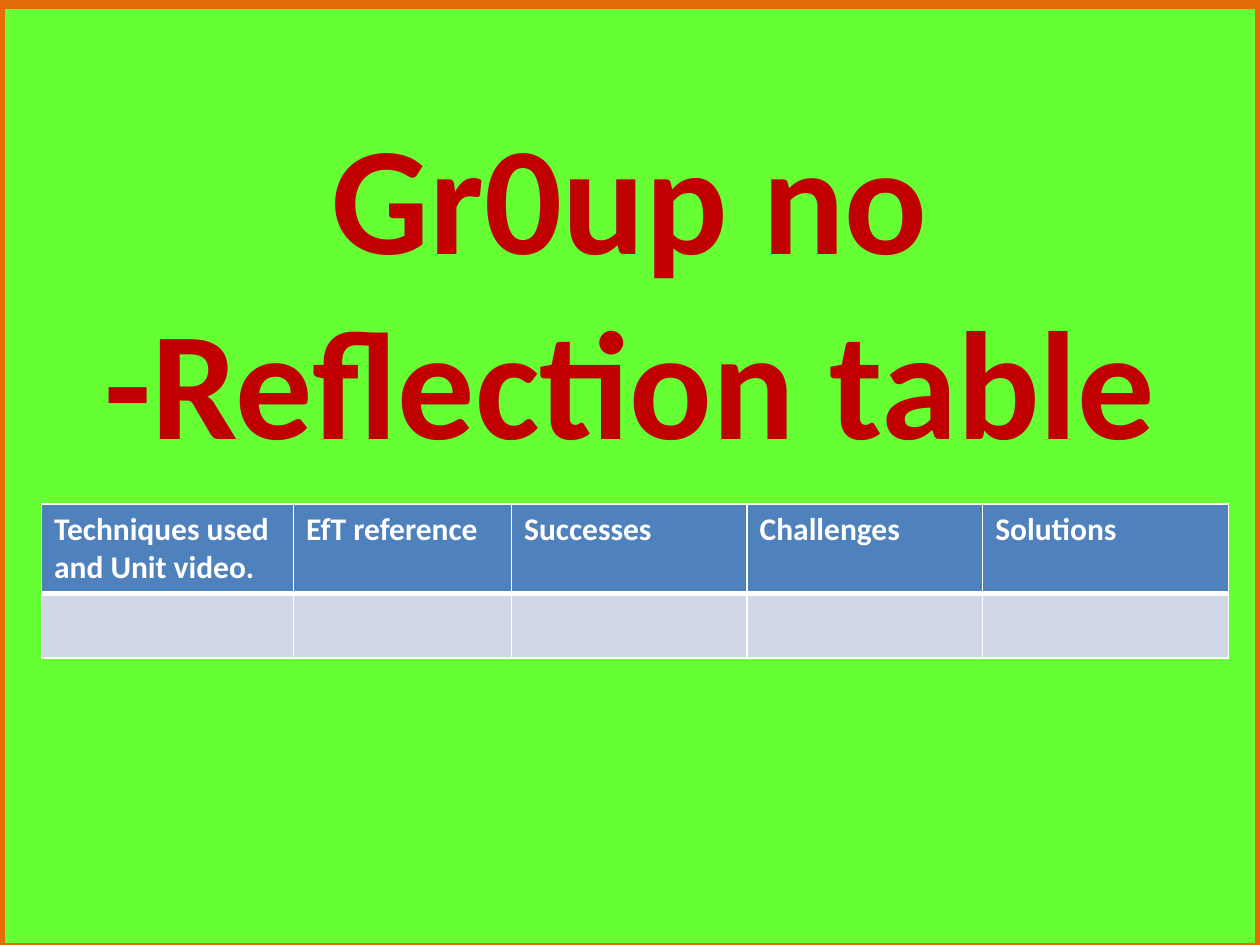
import pptx
import pptx.dml.color
import pptx.enum.shapes
import pptx.enum.text
import pptx.oxml.ns
import pptx.util
from lxml import etree

SLIDE_WIDTH, SLIDE_HEIGHT = 10, 7.5
COLUMN_WIDTHS = [2, 1.73, 1.87, 1.87, 1.95]
ROW_HEIGHTS = [0.7, 0.51]
HEADINGS = [
    "Techniques used and Unit video.",
    "EfT reference",
    "Successes",
    "Challenges",
    "Solutions",
]


def inches(value):
    return pptx.util.Inches(value)


def colour(code):
    return pptx.dml.color.RGBColor.from_string(code)


def style_text(para, size, code):
    para.font.name = "Calibri"
    para.font.size = pptx.util.Pt(size)
    para.font.bold = True
    para.font.color.rgb = colour(code)


def add_title_panel(page, text):
    panel = page.shapes.add_shape(
        pptx.enum.shapes.MSO_SHAPE.RECTANGLE,
        0, inches(0.03), inches(SLIDE_WIDTH), inches(SLIDE_HEIGHT),
    )
    panel.shadow.inherit = False
    panel.fill.solid()
    panel.fill.fore_color.rgb = colour("66FF33")
    panel.line.color.rgb = colour("E46C0A")
    panel.line.width = pptx.util.Pt(6)
    frame = panel.text_frame
    frame.word_wrap = True
    frame.vertical_anchor = pptx.enum.text.MSO_ANCHOR.TOP
    frame.margin_top = inches(0.77)
    para = frame.paragraphs[0]
    para.text = text
    para.alignment = pptx.enum.text.PP_ALIGN.CENTER
    style_text(para, 88, "C00000")


def add_borders(cell, widths):
    properties = cell._tc.get_or_add_tcPr()
    for side, width in widths.items():
        line = etree.SubElement(
            properties, pptx.oxml.ns.qn(f"a:ln{side}"), w=str(pptx.util.Pt(width))
        )
        fill = etree.SubElement(line, pptx.oxml.ns.qn("a:solidFill"))
        etree.SubElement(fill, pptx.oxml.ns.qn("a:srgbClr"), val="FFFFFF")


def style_cell(cell, code, top, bottom):
    add_borders(cell, {"L": 1, "R": 1, "T": top, "B": bottom})
    cell.fill.solid()
    cell.fill.fore_color.rgb = colour(code)


def add_reflection_table(page, left, top):
    table = page.shapes.add_table(
        len(ROW_HEIGHTS), len(COLUMN_WIDTHS), inches(left), inches(top),
        inches(sum(COLUMN_WIDTHS)), inches(sum(ROW_HEIGHTS)),
    ).table
    for row, height in zip(table.rows, ROW_HEIGHTS):
        row.height = inches(height)
    for index, (width, heading) in enumerate(zip(COLUMN_WIDTHS, HEADINGS)):
        table.columns[index].width = inches(width)
        header = table.cell(0, index)
        header.text = heading
        style_text(header.text_frame.paragraphs[0], 18, "FFFFFF")
        style_cell(header, "4F81BD", 1, 3)
        style_cell(table.cell(1, index), "D0D8E8", 3, 1)


def main():
    deck = pptx.Presentation()
    deck.slide_width = inches(SLIDE_WIDTH)
    deck.slide_height = inches(SLIDE_HEIGHT)
    page = deck.slides.add_slide(deck.slide_layouts[6])
    add_title_panel(page, "Gr0up no -Reflection table")
    add_reflection_table(page, 0.33, 4)
    deck.save("out.pptx")


if __name__ == "__main__":
    main()
